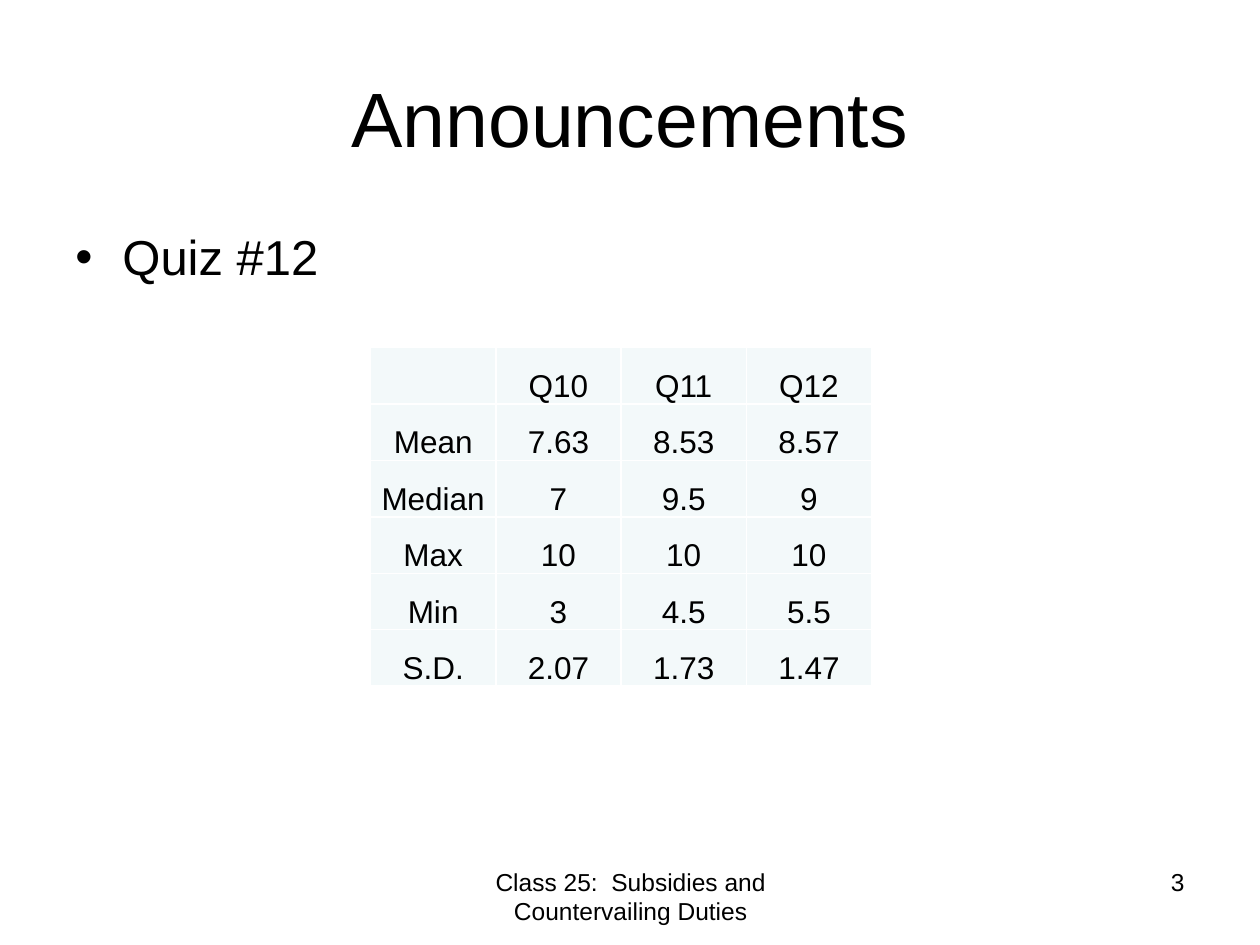
from lxml import etree
from pptx import Presentation
from pptx.dml.color import RGBColor
from pptx.enum import text
from pptx.oxml import ns
from pptx.util import Cm, Pt

BLACK = RGBColor(0x00, 0x00, 0x00)
WHITE = RGBColor(0xFF, 0xFF, 0xFF)
PALE_TEAL = RGBColor(0xF3, 0xF9, 0xFA)
LEFT, CENTER, RIGHT = text.PP_ALIGN.LEFT, text.PP_ALIGN.CENTER, text.PP_ALIGN.RIGHT
TOP, MIDDLE, BOTTOM = text.MSO_ANCHOR.TOP, text.MSO_ANCHOR.MIDDLE, text.MSO_ANCHOR.BOTTOM


def write(paragraph, wording, size, align):
    paragraph.text = wording
    paragraph.alignment = align
    for name, value in {"name": "Arial", "size": Pt(size)}.items():
        setattr(paragraph.font, name, value)
    paragraph.font.color.rgb = BLACK


def add_text(wording, box, size, align, anchor=TOP):
    frame = slide.shapes.add_textbox(*map(Cm, box)).text_frame
    for name, value in {"word_wrap": True, "vertical_anchor": anchor}.items():
        setattr(frame, name, value)
    write(frame.paragraphs[0], wording, size, align)
    return frame.paragraphs[0]


deck = Presentation()
deck.slide_width, deck.slide_height = Cm(25.4), Cm(19.05)
slide = deck.slides.add_slide(deck.slide_layouts[6])

add_text("Announcements", (1.27, 0.76, 22.86, 3.18), 44, CENTER, MIDDLE)

quiz = add_text("Quiz #12", (1.27, 4.45, 22.86, 12.57), 28, LEFT)
quiz.space_before = Pt(5.6)
indent = quiz._p.get_or_add_pPr()
for name, value in {"marL": Cm(0.95), "indent": -Cm(0.95)}.items():
    indent.set(name, str(value))
etree.SubElement(indent, ns.qn("a:buFont")).set("typeface", "Arial")
etree.SubElement(indent, ns.qn("a:buChar")).set("char", "•")

add_text("Class 25:  Subsidies and Countervailing Duties", (8.69, 17.35, 8.05, 1.32), 14, CENTER)
add_text("3", (18.21, 17.35, 5.92, 1.32), 14, RIGHT)

scores = [
    ("", "Q10", "Q11", "Q12"),
    ("Mean", "7.63", "8.53", "8.57"),
    ("Median", "7", "9.5", "9"),
    ("Max", "10", "10", "10"),
    ("Min", "3", "4.5", "5.5"),
    ("S.D.", "2.07", "1.73", "1.47"),
]
cell_format = {
    "margin_left": Cm(0.03),
    "margin_right": Cm(0.03),
    "margin_top": Cm(0.03),
    "margin_bottom": Cm(0),
    "vertical_anchor": BOTTOM,
}
score_table = slide.shapes.add_table(
    len(scores), len(scores[0]), Cm(7.47), Cm(7.01), Cm(10.1), Cm(6.82)
).table
for column in score_table.columns:
    column.width = Cm(2.525)
for row, values in zip(score_table.rows, scores):
    row.height = Cm(1.137)
    for cell, value in zip(row.cells, values):
        for name, setting in cell_format.items():
            setattr(cell, name, setting)
        write(cell.text_frame.paragraphs[0], value, 18, CENTER)
        borders = cell._tc.get_or_add_tcPr()
        for side in ("lnL", "lnR", "lnT", "lnB"):
            line = etree.SubElement(borders, ns.qn(f"a:{side}"), w=str(Pt(1)))
            paint = etree.SubElement(line, ns.qn("a:solidFill"))
            etree.SubElement(paint, ns.qn("a:srgbClr"), val=str(WHITE))
        cell.fill.solid()
        cell.fill.fore_color.rgb = PALE_TEAL

deck.save("out.pptx")
